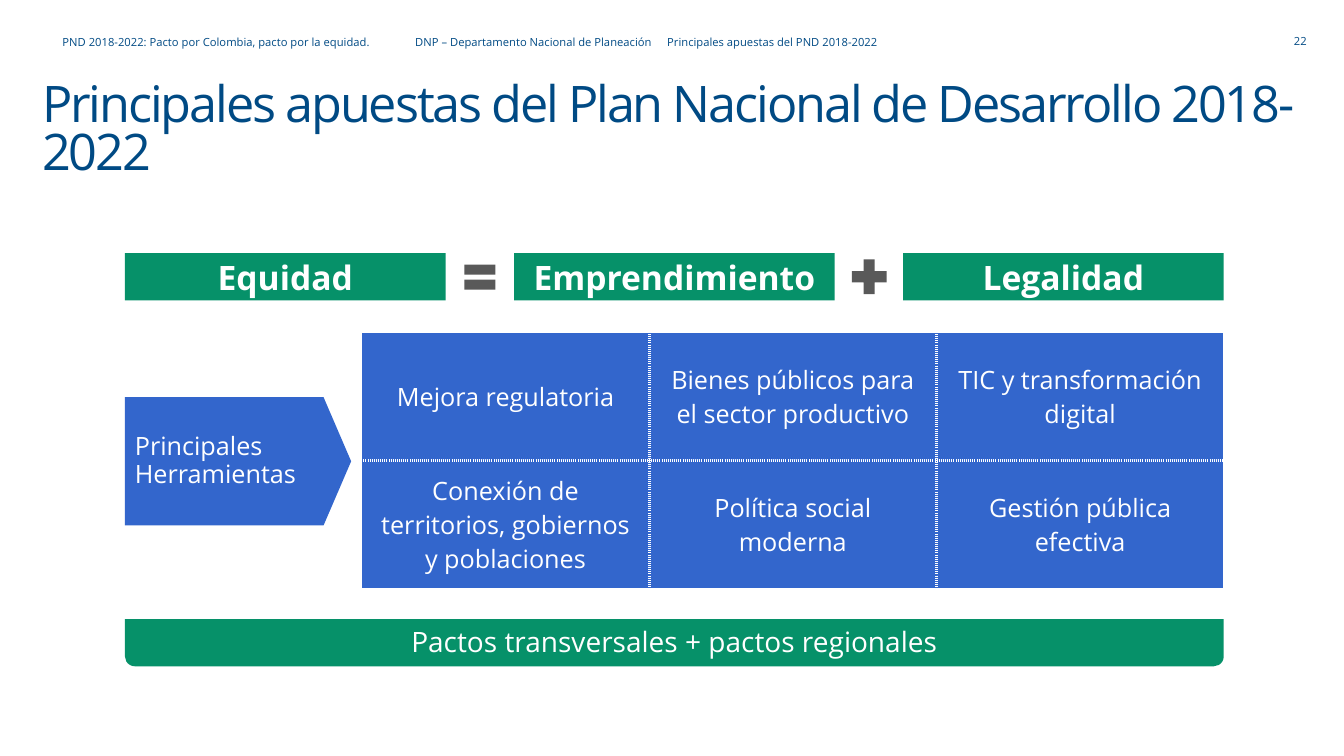
import pptx
import pptx.util
import pptx.dml.color
import pptx.enum.shapes
import pptx.enum.text
import pptx.oxml

Cm = pptx.util.Cm
Shape = pptx.enum.shapes.MSO_SHAPE
Align = pptx.enum.text.PP_ALIGN
Anchor = pptx.enum.text.MSO_ANCHOR
NS = 'xmlns:a="http://schemas.openxmlformats.org/drawingml/2006/main"'


class Theme:
    font = "Open Sans"
    navy = "004A84"
    blue = "3366CC"
    green = "069169"
    gray = "595959"
    white = "FFFFFF"
    small = 8
    body = 18
    base = 20
    head = 24
    title = 36


def write(frame, text, size, color, align=Align.LEFT, bold=False, anchor=Anchor.MIDDLE):
    frame.text = text
    frame.word_wrap = True
    frame.vertical_anchor = anchor
    para = frame.paragraphs[0]
    para.alignment = align
    para.space_before = pptx.util.Pt(0)
    for run in para.runs:
        run.font.name = Theme.font
        run.font.size = pptx.util.Pt(size)
        run.font.bold = bold
        run.font.color.rgb = pptx.dml.color.RGBColor.from_string(color)
    return para


def draw(kind, left, top, width, height, color):
    shape = slide.shapes.add_shape(kind, Cm(left), Cm(top), Cm(width), Cm(height))
    shape.shadow.inherit = False
    shape.fill.solid()
    shape.fill.fore_color.rgb = pptx.dml.color.RGBColor.from_string(color)
    shape.line.fill.background()
    return shape


deck = pptx.Presentation()
deck.slide_width = Cm(33.87)
deck.slide_height = Cm(19.05)
slide = deck.slides.add_slide(deck.slide_layouts[1])

title = slide.shapes.title
title.left, title.top, title.width, title.height = Cm(0.81), Cm(1.98), Cm(32.26), Cm(1.55)
para = write(title.text_frame, "Principales apuestas del Plan Nacional de Desarrollo 2018-2022",
             Theme.title, Theme.navy, anchor=Anchor.TOP)
title.text_frame.auto_size = pptx.enum.text.MSO_AUTO_SIZE.NONE
para.line_spacing = 0.8
para.runs[0].font._element.set("spc", "-150")

strip = slide.placeholders[1]
strip.left, strip.top, strip.width, strip.height = Cm(1.32), Cm(0.66), Cm(29.74), Cm(0.79)
para = write(strip.text_frame, "PND 2018-2022: Pacto por Colombia, pacto por la equidad."
             "\tDNP – Departamento Nacional de Planeación"
             "\tPrincipales apuestas del PND 2018-2022", Theme.small, Theme.navy)
strip.text_frame.auto_size = pptx.enum.text.MSO_AUTO_SIZE.NONE
props = para._p.get_or_add_pPr()
props.set("marL", "0")
props.set("indent", "0")
props.append(pptx.oxml.parse_xml(f"<a:buNone {NS}/>"))
stops = "".join(f'<a:tab pos="{Cm(stop)}" algn="l"/>' for stop in (12.7, 22.86))
props.append(pptx.oxml.parse_xml(f"<a:tabLst {NS}>{stops}</a:tabLst>"))

page = slide.shapes.add_textbox(Cm(32.26), Cm(0.74), Cm(1.02), Cm(0.61))
write(page.text_frame, "22", Theme.small, Theme.navy, Align.CENTER)

left, full = 3.15, 27.69
top, tall, wide = 6.38, 1.19, 8.08
step = (full - wide) / 2
for col, name in enumerate(("Equidad", "Emprendimiento", "Legalidad")):
    box = draw(Shape.RECTANGLE, left + col * step, top, wide, tall, Theme.green)
    write(box.text_frame, name, Theme.head, Theme.white, Align.CENTER, True)
draw(Shape.MATH_EQUAL, 11.56, 6.45, 1.07, 1.07, Theme.gray)
draw(Shape.MATH_PLUS, 21.31, top, tall, tall, Theme.gray)

arrow = draw(Shape.PENTAGON, left, 10.01, 5.7, 3.23, Theme.blue)
arrow.adjustments[0] = 0.215
para = write(arrow.text_frame, "Principales Herramientas", Theme.body, Theme.white)
para.line_spacing = 0.9

tools = (
    ("Mejora regulatoria", "Bienes públicos para el sector productivo",
     "TIC y transformación digital"),
    ("Conexión de territorios, gobiernos y poblaciones", "Política social moderna",
     "Gestión pública efectiva"),
)
grid = slide.shapes.add_table(2, 3, Cm(9.12), Cm(8.38), Cm(21.72), Cm(6.46)).table
grid.first_row = False
grid.horz_banding = False
for row, names in enumerate(tools):
    for col, name in enumerate(names):
        cell = grid.cell(row, col)
        write(cell.text_frame, name, Theme.body, Theme.white, Align.CENTER)
        cell.vertical_anchor = Anchor.MIDDLE
        cell.fill.solid()
        cell.fill.fore_color.rgb = pptx.dml.color.RGBColor.from_string(Theme.blue)
        inner = {"L": col > 0, "R": col < 2, "T": row > 0, "B": row < 1}
        sides = [side for side in inner if inner[side]]
        for spot, side in enumerate(sides):
            cell._tc.tcPr.insert(spot, pptx.oxml.parse_xml(
                f'<a:ln{side} {NS} w="{pptx.util.Pt(2.25)}"><a:solidFill>'
                f'<a:srgbClr val="{Theme.white}"/></a:solidFill>'
                f'<a:prstDash val="sysDot"/></a:ln{side}>'))

base = draw(Shape.ROUND_2_SAME_RECTANGLE, left, 15.6, full, tall, Theme.green)
base.adjustments[0] = 0
base.adjustments[1] = 0.209
write(base.text_frame, "Pactos transversales + pactos regionales",
      Theme.base, Theme.white, Align.CENTER)

deck.save("out.pptx")
